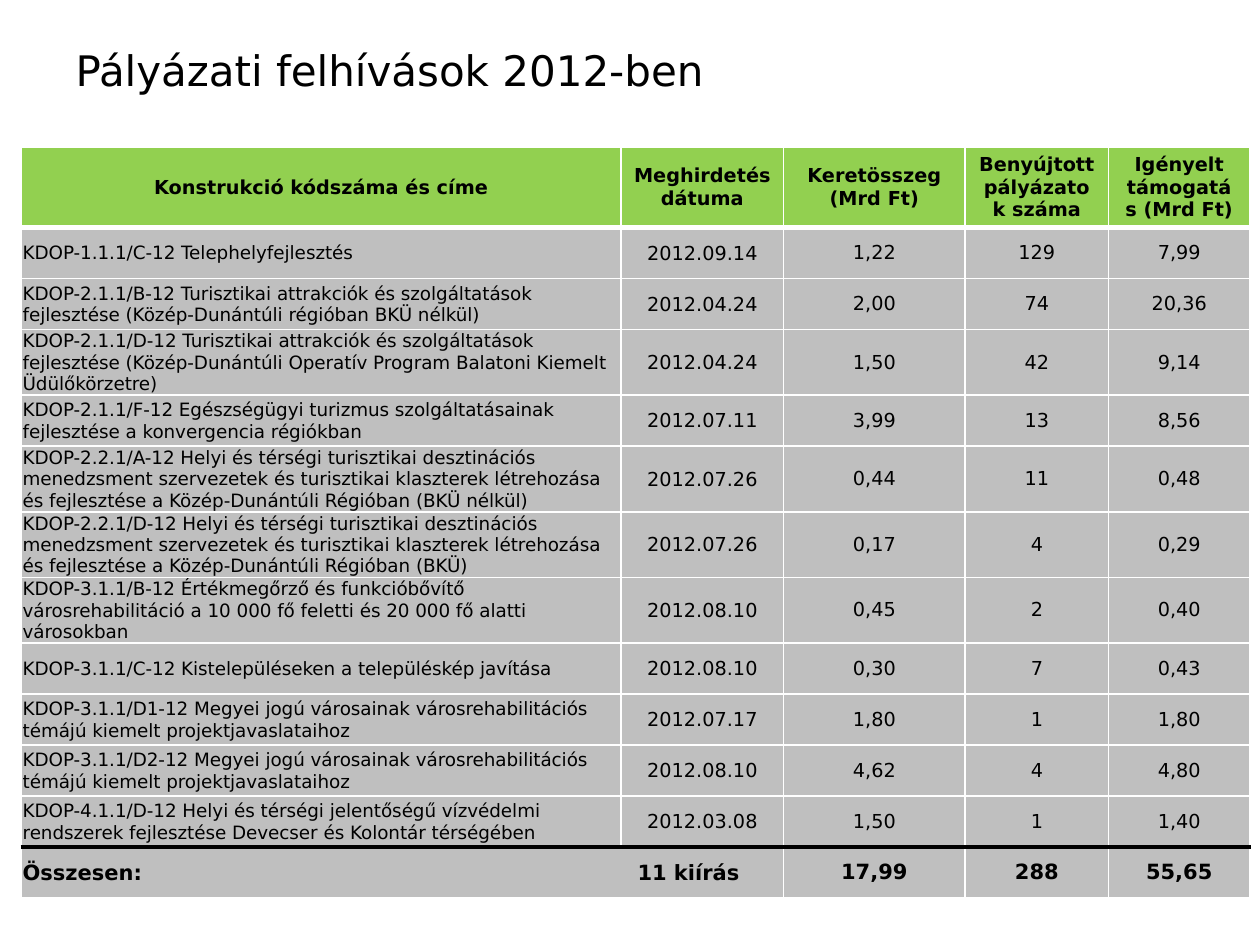
from lxml import etree
from pptx import Presentation
from pptx.dml.color import RGBColor
from pptx.enum.text import MSO_ANCHOR, PP_ALIGN
from pptx.oxml.ns import qn
from pptx.util import Inches, Pt

LEFT, MID = PP_ALIGN.LEFT, PP_ALIGN.CENTER
TOP, CENTER = MSO_ANCHOR.TOP, MSO_ANCHOR.MIDDLE
BLACK = RGBColor(0x00, 0x00, 0x00)
WHITE = RGBColor(0xFF, 0xFF, 0xFF)
GREEN = RGBColor(0x92, 0xD0, 0x50)
GREY = RGBColor(0xBF, 0xBF, 0xBF)
FONT = "DejaVu Sans"

COLS = [4.76, 1.29, 1.44, 1.14, 1.12]
HEAD = [
    "Konstrukció kódszáma és címe",
    "Meghirdetés\ndátuma",
    "Keretösszeg\n(Mrd Ft)",
    "Benyújtott pályázatok száma",
    "Igényelt támogatás (Mrd Ft)",
]
CALLS = [
    ("KDOP-1.1.1/C-12 Telephelyfejlesztés",
     "2012.09.14", "1,22", "129", "7,99"),
    ("KDOP-2.1.1/B-12 Turisztikai attrakciók és szolgáltatások fejlesztése "
     "(Közép-Dunántúli régióban BKÜ nélkül)",
     "2012.04.24", "2,00", "74", "20,36"),
    ("KDOP-2.1.1/D-12 Turisztikai attrakciók és szolgáltatások fejlesztése "
     "(Közép-Dunántúli Operatív Program Balatoni Kiemelt Üdülőkörzetre)",
     "2012.04.24", "1,50", "42", "9,14"),
    ("KDOP-2.1.1/F-12 Egészségügyi turizmus szolgáltatásainak fejlesztése "
     "a konvergencia régiókban",
     "2012.07.11", "3,99", "13", "8,56"),
    ("KDOP-2.2.1/A-12 Helyi és térségi turisztikai desztinációs menedzsment "
     "szervezetek és turisztikai klaszterek létrehozása és fejlesztése "
     "a Közép-Dunántúli Régióban (BKÜ nélkül)",
     "2012.07.26", "0,44", "11", "0,48"),
    ("KDOP-2.2.1/D-12 Helyi és térségi turisztikai desztinációs menedzsment "
     "szervezetek és turisztikai klaszterek létrehozása és fejlesztése "
     "a Közép-Dunántúli Régióban (BKÜ)",
     "2012.07.26", "0,17", "4", "0,29"),
    ("KDOP-3.1.1/B-12 Értékmegőrző és funkcióbővítő városrehabilitáció "
     "a 10 000 fő feletti és 20 000 fő alatti városokban",
     "2012.08.10", "0,45", "2", "0,40"),
    ("KDOP-3.1.1/C-12 Kistelepüléseken a településkép javítása",
     "2012.08.10", "0,30", "7", "0,43"),
    ("KDOP-3.1.1/D1-12 Megyei jogú városainak városrehabilitációs témájú "
     "kiemelt projektjavaslataihoz",
     "2012.07.17", "1,80", "1", "1,80"),
    ("KDOP-3.1.1/D2-12 Megyei jogú városainak városrehabilitációs témájú "
     "kiemelt projektjavaslataihoz",
     "2012.08.10", "4,62", "4", "4,80"),
    ("KDOP-4.1.1/D-12 Helyi és térségi jelentőségű vízvédelmi rendszerek "
     "fejlesztése Devecser és Kolontár térségében",
     "2012.03.08", "1,50", "1", "1,40"),
]
TOTAL = ["Összesen:\t11 kiírás", "", "17,99", "288", "55,65"]


def write(frame, text, size, bold=False, align=LEFT):
    for i, line in enumerate(text.split("\n")):
        para = frame.paragraphs[0] if i == 0 else frame.add_paragraph()
        para.alignment = align
        run = para.add_run()
        run.text = line
        font = run.font
        font.name, font.size, font.bold = FONT, Pt(size), bold
        font.color.rgb = BLACK


def edge(cell, side, color=WHITE, width=1):
    """Draw one border; side is L, R, T or B, called in that order."""
    line = etree.SubElement(cell._tc.get_or_add_tcPr(), qn("a:ln" + side),
                            w=str(Pt(width)))
    fill = etree.SubElement(line, qn("a:solidFill"))
    etree.SubElement(fill, qn("a:srgbClr"), val=str(color))


def paint(cell, fill, top=(WHITE, 1), base=(WHITE, 1)):
    edge(cell, "L")
    edge(cell, "R")
    edge(cell, "T", *top)
    edge(cell, "B", *base)
    cell.fill.solid()
    cell.fill.fore_color.rgb = fill
    cell.vertical_anchor = CENTER


def trim(cell):
    """Give a cell almost no inner margin."""
    cell.margin_left = cell.margin_right = cell.margin_top = Inches(0.01)
    cell.margin_bottom = 0


def add_tab(para, pos):
    tabs = etree.SubElement(para._p.get_or_add_pPr(), qn("a:tabLst"))
    etree.SubElement(tabs, qn("a:tab"), pos=str(Inches(pos)), algn="l")


def add_title(slide, left, top, width, height):
    title = slide.shapes.title
    title.left, title.top = Inches(left), Inches(top)
    title.width, title.height = Inches(width), Inches(height)
    title.text_frame.vertical_anchor = TOP
    write(title.text_frame, "Pályázati felhívások 2012-ben", 24)


def add_calls(slide, left, top, width, height):
    rows = [HEAD, *CALLS, TOTAL]
    last = len(rows) - 1
    table = slide.shapes.add_table(
        len(rows), len(COLS), Inches(left), Inches(top),
        Inches(width), Inches(height)).table
    table.horz_banding = False
    for col, share in zip(table.columns, COLS):
        col.width = Inches(width * share / sum(COLS))
    rule = (BLACK, 2.25)
    for r, row in enumerate(rows):
        for c, text in enumerate(row):
            cell = table.cell(r, c)
            if r == 0:
                paint(cell, GREEN, base=(WHITE, 3))
            elif r == last:
                paint(cell, GREY, top=rule)
            else:
                paint(cell, GREY, base=rule if r == last - 1 else (WHITE, 1))
            if r > 0 and c < 2:
                trim(cell)
            if not text:
                continue
            if r == last and c == 0:
                add_tab(cell.text_frame.paragraphs[0], 4.88)
            size = 12 if r == last else 10.5 if r > 0 and c == 0 else 11
            write(cell.text_frame, text, size, r in (0, last),
                  LEFT if r > 0 and c == 0 else MID)
    table.cell(last, 0).merge(table.cell(last, 1))


def main():
    deck = Presentation()
    deck.slide_width, deck.slide_height = Inches(10), Inches(7.5)
    slide = deck.slides.add_slide(deck.slide_layouts[5])
    add_title(slide, 0.5, 0.3, 9, 1.25)
    add_calls(slide, 0.17, 1.17, sum(COLS), 5.27)
    deck.save("out.pptx")


if __name__ == "__main__":
    main()
